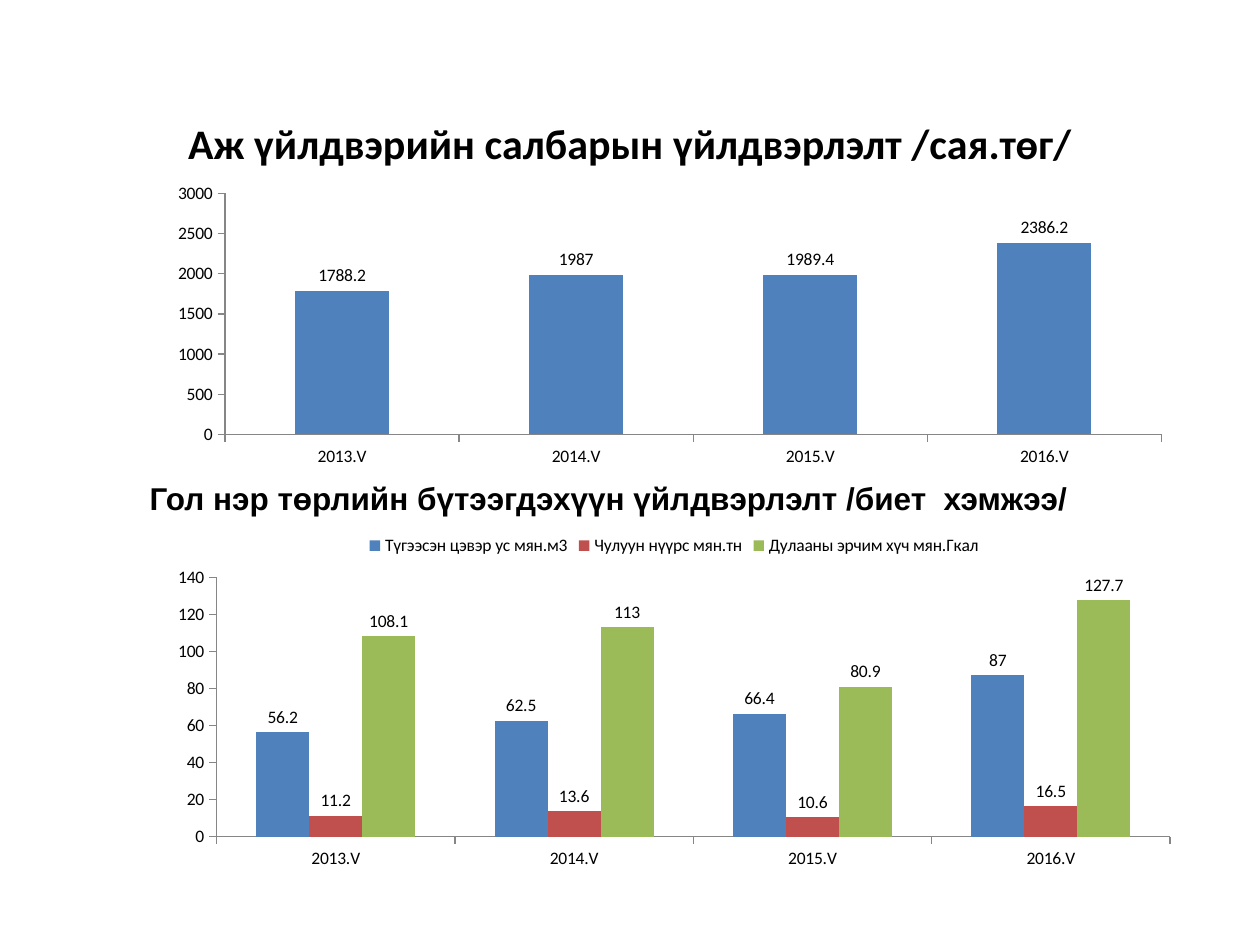
from pptx import Presentation
from pptx.chart.data import CategoryChartData
from pptx.dml.color import RGBColor
from pptx.enum.chart import XL_CHART_TYPE, XL_LABEL_POSITION, XL_LEGEND_POSITION, XL_TICK_MARK
from pptx.enum.text import MSO_ANCHOR, PP_ALIGN
from pptx.util import Inches, Pt

SLIDE_WIDTH = 10
SLIDE_HEIGHT = 7.5
BLACK = "000000"
AXIS_GRAY = "868686"
BLUE, RED, GREEN = "4F81BD", "C0504D", "9BBB59"
YEARS = ["2013.V", "2014.V", "2015.V", "2016.V"]
OUTPUT_SERIES = [("Series 1", [1788.2, 1987, 1989.4, 2386.2], BLUE)]
PRODUCT_SERIES = [
    ("Түгээсэн цэвэр ус мян.м3", [56.2, 62.5, 66.4, 87], BLUE),
    ("Чулуун нүүрс мян.тн", [11.2, 13.6, 10.6, 16.5], RED),
    ("Дулааны эрчим хүч мян.Гкал", [108.1, 113, 80.9, 127.7], GREEN),
]


def color(value):
    return RGBColor.from_string(value)


def area(left, top, width, height):
    return (
        Inches(SLIDE_WIDTH * left / 100),
        Inches(SLIDE_HEIGHT * top / 100),
        Inches(SLIDE_WIDTH * width / 100),
        Inches(SLIDE_HEIGHT * height / 100),
    )


def style_font(font, name, size, bold=False):
    font.name = name
    font.size = Pt(size)
    font.bold = bold
    font.color.rgb = color(BLACK)


def write_heading(shape, text, font_name, size, alignment, anchor):
    frame = shape.text_frame
    frame.word_wrap = True
    frame.vertical_anchor = anchor
    paragraph = frame.paragraphs[0]
    paragraph.alignment = alignment
    run = paragraph.add_run()
    run.text = text
    style_font(run.font, font_name, size, bold=True)


def add_title(slide, text, place):
    title = slide.shapes.title
    title.left, title.top, title.width, title.height = place
    write_heading(title, text, "Calibri", 24, PP_ALIGN.CENTER, MSO_ANCHOR.MIDDLE)


def add_subtitle(slide, text, place):
    box = slide.shapes.add_textbox(*place)
    write_heading(box, text, "Arial", 18, PP_ALIGN.LEFT, MSO_ANCHOR.TOP)


def style_axis(axis):
    axis.has_major_gridlines = False
    axis.major_tick_mark = XL_TICK_MARK.OUTSIDE
    axis.minor_tick_mark = XL_TICK_MARK.NONE
    axis.format.line.color.rgb = color(AXIS_GRAY)
    axis.format.line.width = Pt(0.75)


def style_series(series, fill_color):
    series.format.fill.solid()
    series.format.fill.fore_color.rgb = color(fill_color)
    series.invert_if_negative = False
    labels = series.data_labels
    labels.show_value = True
    labels.position = XL_LABEL_POSITION.OUTSIDE_END


def add_column_chart(slide, series_rows, place, maximum, step, legend=False):
    data = CategoryChartData()
    data.categories = YEARS
    for name, values, _ in series_rows:
        data.add_series(name, values)
    chart = slide.shapes.add_chart(XL_CHART_TYPE.COLUMN_CLUSTERED, *place, data).chart
    style_font(chart.font, "Calibri", 10)
    chart.has_title = False
    chart.has_legend = legend
    if legend:
        chart.legend.position = XL_LEGEND_POSITION.TOP
        chart.legend.include_in_layout = False
    plot = chart.plots[0]
    plot.gap_width = 150
    plot.overlap = 0
    plot.vary_by_categories = False
    for series, (_, _, fill_color) in zip(plot.series, series_rows):
        style_series(series, fill_color)
    style_axis(chart.category_axis)
    style_axis(chart.value_axis)
    chart.value_axis.minimum_scale = 0
    chart.value_axis.maximum_scale = maximum
    chart.value_axis.major_unit = step


def main():
    presentation = Presentation()
    presentation.slide_width = Inches(SLIDE_WIDTH)
    presentation.slide_height = Inches(SLIDE_HEIGHT)
    slide = presentation.slides.add_slide(presentation.slide_layouts[5])
    add_title(slide, "Аж үйлдвэрийн салбарын үйлдвэрлэлт /сая.төг/", area(5, 10.4, 90, 9.33))
    add_subtitle(
        slide,
        "Гол нэр төрлийн бүтээгдэхүүн үйлдвэрлэлт /биет  хэмжээ/",
        area(10.9, 50, 86.7, 5.33),
    )
    add_column_chart(slide, OUTPUT_SERIES, area(12.5, 18.8, 81.3, 31.2), 3000, 500)
    add_column_chart(slide, PRODUCT_SERIES, area(12.5, 55.2, 82, 37.47), 140, 20, legend=True)
    presentation.save("out.pptx")


if __name__ == "__main__":
    main()
